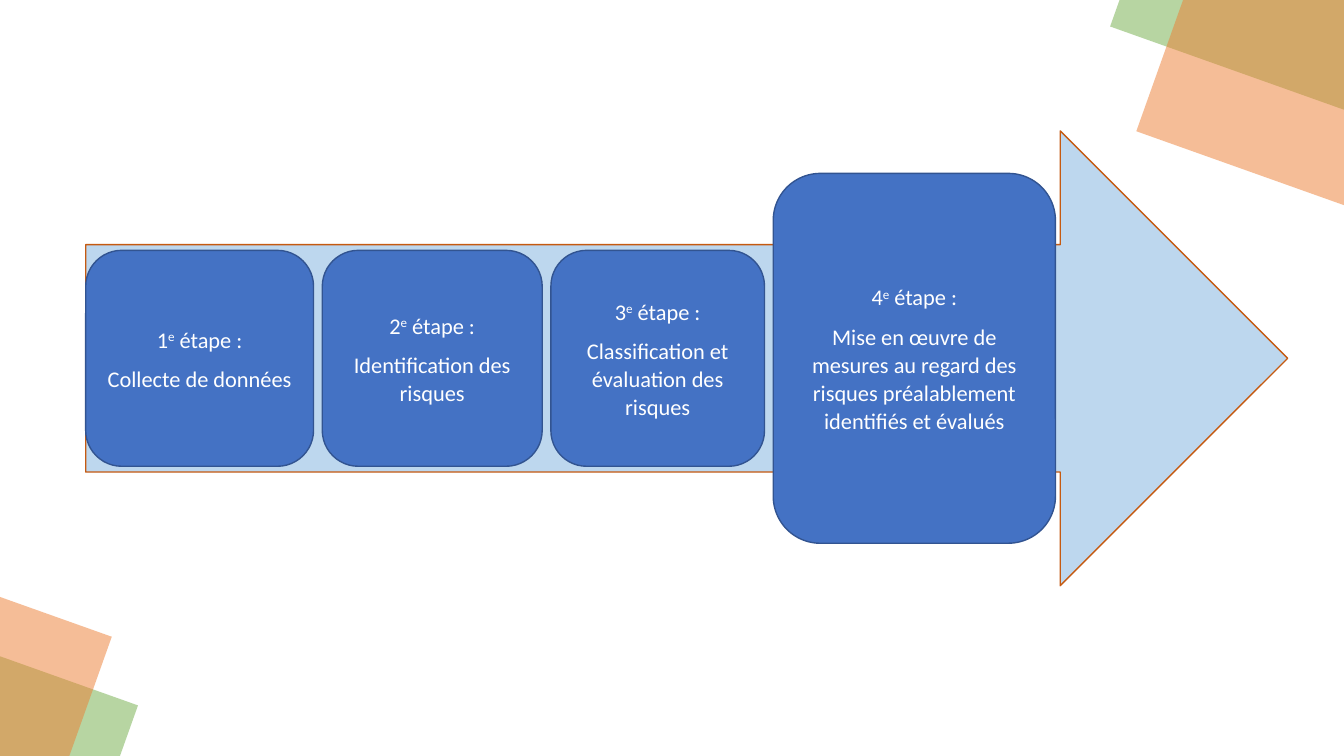
from lxml.etree import SubElement
from pptx import Presentation
from pptx.dml.color import RGBColor
from pptx.enum.shapes import MSO_SHAPE as Shape
from pptx.enum.text import MSO_ANCHOR as Anchor, PP_ALIGN as Align
from pptx.oxml.ns import qn
from pptx.util import Cm, Inches, Pt

COLOURS = {
    "arrow": "BDD7EE",
    "arrow_line": "C55A11",
    "step": "4472C4",
    "step_line": "325491",
    "text": "FFFFFF",
    "green": "70AD47",
    "orange": "ED7D31",
}
PARA_FORMAT = {"alignment": Align.CENTER, "line_spacing": 1.05, "space_after": Pt(8)}
FONT_FORMAT = {"name": "Calibri", "size": Pt(16)}

# Arrow and steps, in centimetres
LEFT, MIDDLE = 2.16, 9.03
ARROW_WIDTH, ARROW_HEIGHT = 30.28, 11.46
STEP_GAP = 0.22
STEPS = [  # width, height, text
    (5.74, 5.44, "Collecte de données"),
    (5.54, 5.44, "Identification des risques"),
    (5.38, 5.44, "Classification et évaluation des risques"),
    (7.11, 9.32, "Mise en œuvre de mesures au regard des risques "
                 "préalablement identifiés et évalués"),
]

# Corner decoration: left, top, width, height, colour
CORNERS = [
    (-7.21, 15.93, 8.94, 11.96, "green"),
    (-7.87, 14.2, 8.94, 11.96, "orange"),
    (29.69, -9.32, 10.62, 12.12, "green"),
    (30.35, -6.68, 10.62, 12.12, "orange"),
]
CORNER_ANGLE = 19.6


def colour(name):
    return RGBColor.from_string(COLOURS[name])


def apply_format(target, values):
    for name, value in values.items():
        setattr(target, name, value)


def add_filled_shape(parent, kind, left, top, width, height, fill, line=None):
    shape = parent.shapes.add_shape(kind, Cm(left), Cm(top), Cm(width), Cm(height))
    shape.shadow.inherit = False
    shape.fill.solid()
    shape.fill.fore_color.rgb = colour(fill)
    if line:
        shape.line.color.rgb = colour(line)
        shape.line.width = Pt(1)
    else:
        shape.line.fill.background()
    return shape


def add_para(para, *parts):
    """Fill a paragraph with (text, raised) parts."""
    apply_format(para, PARA_FORMAT)
    for text, raised in parts:
        span = para.add_run()
        span.text = text
        apply_format(span.font, FONT_FORMAT)
        span.font.color.rgb = colour("text")
        if raised:
            span._r.get_or_add_rPr().set("baseline", "30000")


def add_step(group, number, left, width, height, text):
    box = add_filled_shape(group, Shape.ROUNDED_RECTANGLE, left, MIDDLE - height / 2,
                           width, height, "step", "step_line")
    frame = box.text_frame
    apply_format(frame, {"word_wrap": True, "vertical_anchor": Anchor.MIDDLE})
    add_para(frame.paragraphs[0], (str(number), False), ("e", True), (" étape :", False))
    add_para(frame.add_paragraph(), (text, False))


def add_corner(page, left, top, width, height, fill):
    tile = add_filled_shape(page, Shape.RECTANGLE, left, top, width, height, fill)
    tile.rotation = CORNER_ANGLE
    # Half transparent fill
    srgb = tile._element.spPr.find(f"{qn('a:solidFill')}/{qn('a:srgbClr')}")
    SubElement(srgb, qn("a:alpha")).set("val", "50000")


def main():
    deck = Presentation()
    deck.slide_width, deck.slide_height = Inches(13.33), Inches(7.5)
    page = deck.slides.add_slide(deck.slide_layouts[6])

    # Process arrow with its steps
    group = page.shapes.add_group_shape()
    add_filled_shape(group, Shape.RIGHT_ARROW, LEFT, MIDDLE - ARROW_HEIGHT / 2,
                     ARROW_WIDTH, ARROW_HEIGHT, "arrow", "arrow_line")
    left = LEFT
    for number, (width, height, text) in enumerate(STEPS, start=1):
        add_step(group, number, left, width, height, text)
        left += width + STEP_GAP

    # Corner decoration
    for corner in CORNERS:
        add_corner(page, *corner)

    deck.save("out.pptx")


if __name__ == "__main__":
    main()
